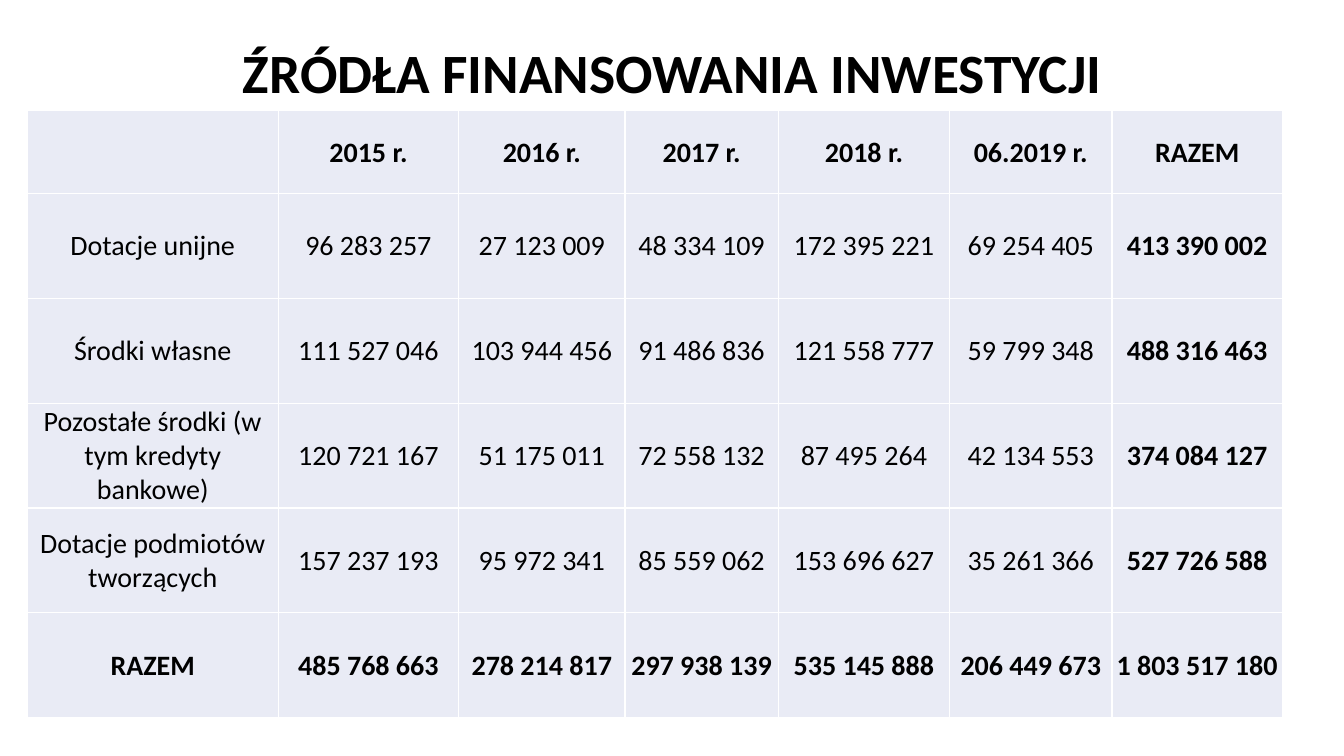
from lxml import etree
from pptx import Presentation
from pptx import util as u
from pptx.dml import color
from pptx.enum import text
from pptx.oxml import ns


def rgb(code):
    return color.RGBColor.from_string(code)


class Page:
    font = "Calibri"
    ink = "000000"
    tint = "E9EBF5"
    rule = "FFFFFF"

    def __init__(self, deck):
        self.slide = deck.slides.add_slide(deck.slide_layouts[6])

    def style(self, para, size, bold):
        para.alignment = text.PP_ALIGN.CENTER
        para.font.name = self.font
        para.font.size = u.Pt(size)
        para.font.bold = bold
        para.font.color.rgb = rgb(self.ink)

    def title(self, words, box, size):
        frame = self.slide.shapes.add_textbox(*map(u.Inches, box)).text_frame
        frame.word_wrap = True
        frame.vertical_anchor = text.MSO_ANCHOR.MIDDLE
        para = frame.paragraphs[0]
        para.text = words
        para.line_spacing = 0.9
        self.style(para, size, True)

    def border(self, cell):
        props = cell._tc.get_or_add_tcPr()
        for side in ("lnL", "lnR", "lnT", "lnB"):
            line = etree.SubElement(props, ns.qn("a:" + side), w=str(u.Pt(1)))
            fill = etree.SubElement(line, ns.qn("a:solidFill"))
            etree.SubElement(fill, ns.qn("a:srgbClr"), val=self.rule)

    def cell(self, cell, words, bold):
        self.border(cell)
        cell.fill.solid()
        cell.fill.fore_color.rgb = rgb(self.tint)
        cell.vertical_anchor = text.MSO_ANCHOR.MIDDLE
        cell.margin_left = cell.margin_right = cell.margin_top = u.Inches(0.01)
        cell.margin_bottom = 0
        para = cell.text_frame.paragraphs[0]
        para.text = words
        self.style(para, 20, bold)

    def table(self, data, left, top, widths, heights):
        box = (left, top, sum(widths), sum(heights))
        grid = self.slide.shapes.add_table(
            len(data), len(data[0]), *map(u.Inches, box)).table
        for col, width in zip(grid.columns, widths):
            col.width = u.Inches(width)
        for row, height in zip(grid.rows, heights):
            row.height = u.Inches(height)
        # Header row, total row and total column are bold
        ends = (0, len(data) - 1)
        for r, line in enumerate(data):
            for c, words in enumerate(line):
                bold = r in ends or c == len(line) - 1
                self.cell(grid.cell(r, c), words, bold)


def main():
    deck = Presentation()
    deck.slide_width = u.Inches(13.33)
    deck.slide_height = u.Inches(7.5)
    page = Page(deck)

    # Heading
    page.title("ŹRÓDŁA FINANSOWANIA INWESTYCJI", (0.92, 0.4, 11.5, 0.7), 39.6)

    # Funding by source and year
    data = [
        ["", "2015 r.", "2016 r.", "2017 r.", "2018 r.", "06.2019 r.", "RAZEM"],
        ["Dotacje unijne", "96 283 257", "27 123 009", "48 334 109",
         "172 395 221", "69 254 405", "413 390 002"],
        ["Środki własne", "111 527 046", "103 944 456", "91 486 836",
         "121 558 777", "59 799 348", "488 316 463"],
        ["Pozostałe środki (w tym kredyty bankowe)", "120 721 167",
         "51 175 011", "72 558 132", "87 495 264", "42 134 553", "374 084 127"],
        ["Dotacje podmiotów tworzących", "157 237 193", "95 972 341",
         "85 559 062", "153 696 627", "35 261 366", "527 726 588"],
        ["RAZEM", "485 768 663", "278 214 817", "297 938 139",
         "535 145 888", "206 449 673", "1 803 517 180"],
    ]
    widths = [2.49, 1.79, 1.65, 1.52, 1.7, 1.61, 1.69]
    page.table(data, 0.27, 1.1, widths, [0.82] + [1.04] * 5)

    deck.save("out.pptx")


if __name__ == "__main__":
    main()
